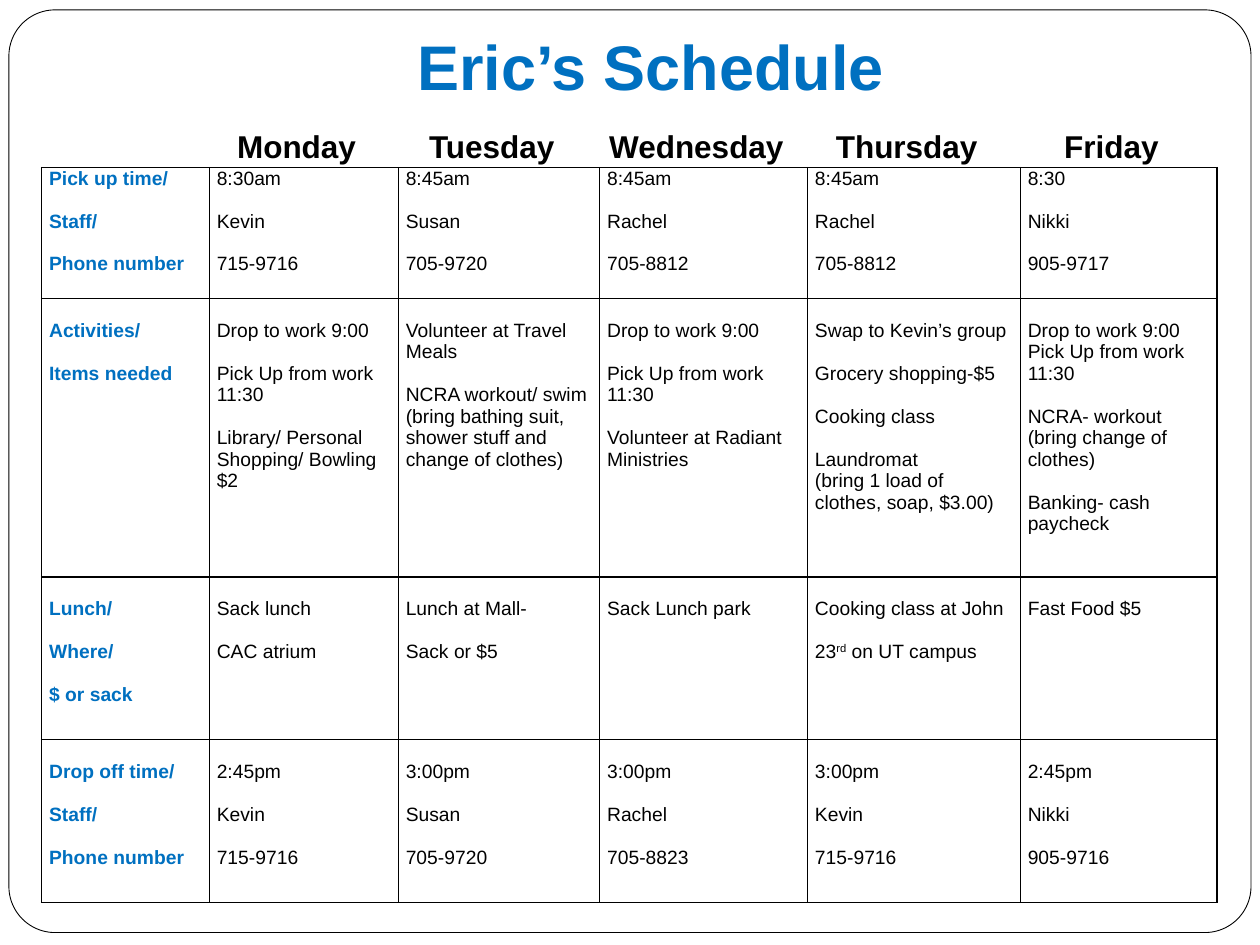
from lxml.etree import SubElement
from pptx import Presentation
from pptx.dml.color import RGBColor
from pptx.enum.shapes import MSO_SHAPE
from pptx.enum.text import MSO_ANCHOR, MSO_AUTO_SIZE, PP_ALIGN
from pptx.oxml.ns import qn
from pptx.util import Cm, Pt

COLOURS = {"blue": "0070C0", "black": "000000", "white": "FFFFFF"}
FONT = "Arial"
LINE = 12.3  # height of one text line in the table, points

TITLE = "Eric’s Schedule"
DAYS = ["Monday", "Tuesday", "Wednesday", "Thursday", "Friday"]
COLUMNS = [3.38, 3.81, 4.06, 4.19, 4.29, 3.96]

# Each row: height, top margin in points, line spacing, cells.
# A cell is a list of blocks; "\n" starts a tight line, "^" wraps superscript.
ROWS = [
    (2.64, 0, 1, [
        ["Pick up time/", "Staff/", "Phone number"],
        ["8:30am", "Kevin", "715-9716"],
        ["8:45am", "Susan", "705-9720"],
        ["8:45am", "Rachel", "705-8812"],
        ["8:45am", "Rachel", "705-8812"],
        ["8:30", "Nikki", "905-9717"],
    ]),
    (5.61, LINE, 1, [
        ["Activities/", "Items needed"],
        ["Drop to work 9:00", "Pick Up from work 11:30",
         "Library/ Personal Shopping/ Bowling\n$2"],
        ["Volunteer at Travel Meals",
         "NCRA workout/ swim\n(bring bathing suit, shower stuff and change of clothes)"],
        ["Drop to work 9:00", "Pick Up from work 11:30",
         "Volunteer at Radiant Ministries"],
        ["Swap to Kevin’s group", "Grocery shopping-$5", "Cooking class",
         "Laundromat\n(bring 1 load of clothes, soap, $3.00)"],
        ["Drop to work 9:00\nPick Up from work 11:30",
         "NCRA- workout (bring change of clothes)", "Banking- cash paycheck"],
    ]),
    (3.28, 0, 2, [
        ["Lunch/", "Where/", "$ or sack"],
        ["Sack lunch", "CAC atrium"],
        ["Lunch at Mall-", "Sack or $5"],
        ["Sack Lunch park"],
        ["Cooking class at John 23^rd^ on UT campus"],
        ["Fast Food $5"],
    ]),
    (3.28, 0, 2, [
        ["Drop off time/", "Staff/", "Phone number"],
        ["2:45pm", "Kevin", "715-9716"],
        ["3:00pm", "Susan", "705-9720"],
        ["3:00pm", "Rachel", "705-8823"],
        ["3:00pm", "Kevin", "715-9716"],
        ["2:45pm", "Nikki", "905-9716"],
    ]),
]


def rgb(name):
    return RGBColor.from_string(COLOURS[name])


def style(font, size, colour, bold):
    font.name, font.size, font.bold = FONT, Pt(size), bold
    font.color.rgb = rgb(colour)


def add_borders(cell):
    properties = cell._tc.get_or_add_tcPr()
    for index, side in enumerate(("lnL", "lnR", "lnT", "lnB")):
        line = SubElement(properties, qn(f"a:{side}"), w=str(Pt(1)))
        fill = SubElement(line, qn("a:solidFill"))
        SubElement(fill, qn("a:srgbClr"), val=COLOURS["black"])
        properties.insert(index, line)


def fill_cell(cell, blocks, top, spacing, heading):
    cell.margin_left = cell.margin_right = Cm(0.15)
    cell.margin_top, cell.margin_bottom = Pt(top), 0
    cell.fill.solid()
    cell.fill.fore_color.rgb = rgb("white")
    add_borders(cell)
    lines = [(text, number == 0) for block in blocks
             for number, text in enumerate(block.split("\n"))]
    for index, (text, opens_block) in enumerate(lines):
        frame = cell.text_frame
        para = frame.paragraphs[0] if index == 0 else frame.add_paragraph()
        para.line_spacing = float(spacing)
        if index and opens_block and spacing == 1:
            para.space_before = Pt(LINE)
        for part, piece in enumerate(text.split("^")):
            span = para.add_run()
            span.text = piece
            style(span.font, 11, "blue" if heading else "black", heading)
            if part % 2:
                span.font._element.set("baseline", "30000")


deck = Presentation()
deck.slide_width, deck.slide_height = Cm(25.4), Cm(19.05)
page = deck.slides.add_slide(deck.slide_layouts[5])

# Rounded frame, behind everything
border = page.shapes.add_shape(MSO_SHAPE.ROUNDED_RECTANGLE,
                               Cm(0.18), Cm(0.2), Cm(25.04), Cm(18.6))
border.adjustments[0] = 0.05
border.shadow.inherit = False
border.fill.solid()
border.fill.fore_color.rgb = rgb("white")
border.line.color.rgb = rgb("black")
border.line.width = Pt(0.5)
page.shapes._spTree.insert(2, border._element)

# Schedule table
table = page.shapes.add_table(len(ROWS), len(COLUMNS), Cm(0.84), Cm(3.38),
                              Cm(sum(COLUMNS)), Cm(sum(row[0] for row in ROWS))).table
table.first_row = table.horz_banding = False
for column, width in zip(table.columns, COLUMNS):
    column.width = Cm(width)
for r, (height, top, spacing, cells) in enumerate(ROWS):
    table.rows[r].height = Cm(height)
    for c, blocks in enumerate(cells):
        fill_cell(table.cell(r, c), blocks, top, spacing, c == 0)

# Title with the day names tabbed to the column centres
box = page.shapes.title
box.left, box.top, box.width, box.height = Cm(0.84), Cm(0.43), Cm(24.56), Cm(3.02)
frame = box.text_frame
frame.text = TITLE
frame.word_wrap = True
frame.auto_size = MSO_AUTO_SIZE.NONE
frame.vertical_anchor = MSO_ANCHOR.MIDDLE
heading = frame.paragraphs[0]
heading.alignment = PP_ALIGN.CENTER
style(heading.runs[0].font, 36, "blue", True)

days = frame.add_paragraph()
days.alignment = PP_ALIGN.LEFT
days.space_before = Pt(14)
tabs = SubElement(days._p.get_or_add_pPr(), qn("a:tabLst"))
for index, width in enumerate(COLUMNS[1:], start=1):
    centre = sum(COLUMNS[:index]) + width / 2 - 0.4
    SubElement(tabs, qn("a:tab"), pos=str(Cm(centre)), algn="ctr")
span = days.add_run()
span.text = "".join("\t" + day for day in DAYS)
style(span.font, 18, "black", True)

deck.save("out.pptx")
